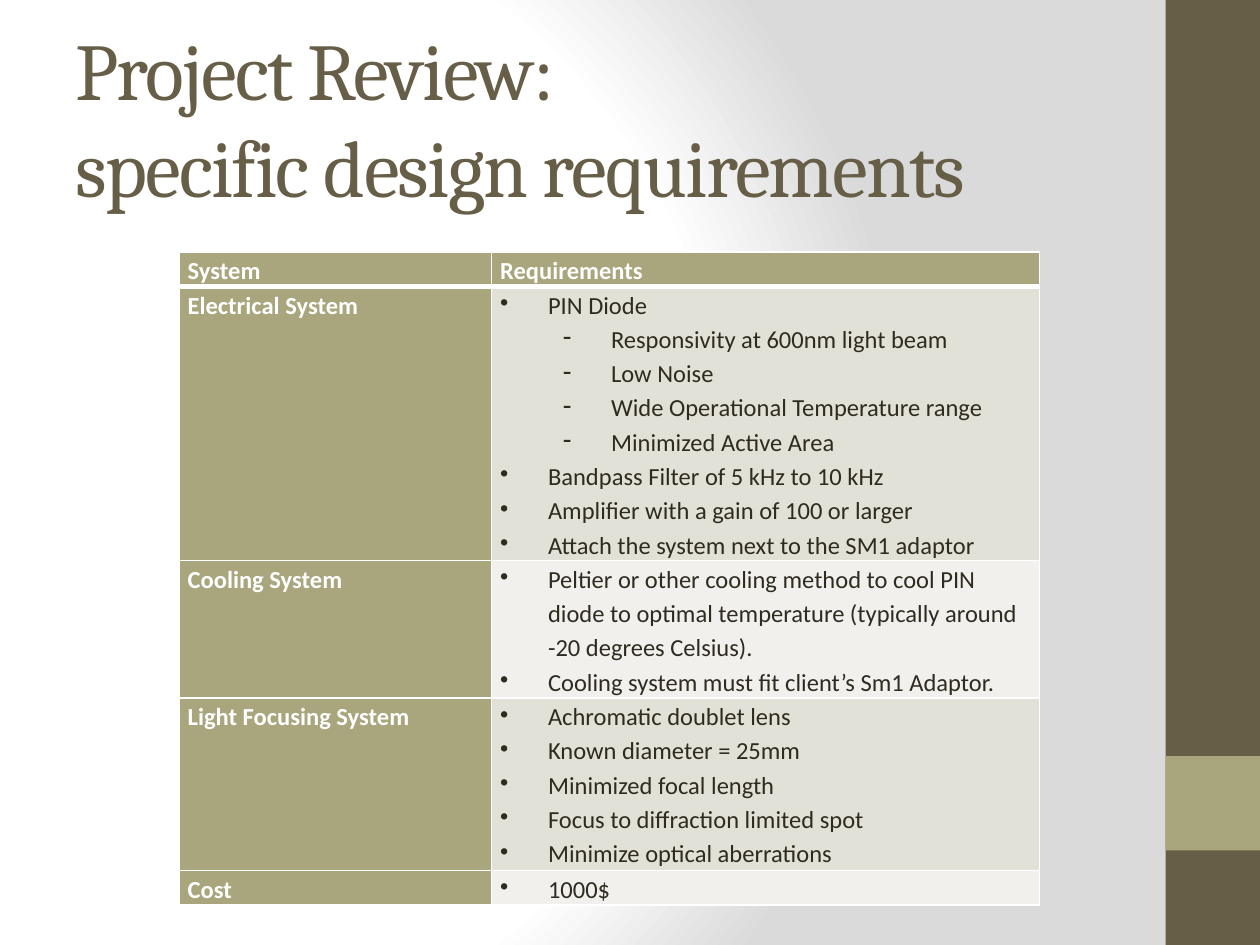
import lxml.etree
import pptx
import pptx.dml.color
import pptx.enum.shapes
import pptx.enum.text
import pptx.oxml
import pptx.oxml.ns
import pptx.util

Inches = pptx.util.Inches
Pt = pptx.util.Pt
qn = pptx.oxml.ns.qn

COLORS = {
    "brown": "675E47",
    "olive": "A9A57C",
    "dark": "2F2B20",
    "band": "E2E1D7",
    "light": "F1F0EC",
    "white": "FFFFFF",
    "gray": "DADADA",
}

ROWS = [
    ("Electrical System", 2.17, [
        (0, "PIN Diode"),
        (1, "Responsivity at 600nm light beam"),
        (1, "Low Noise"),
        (1, "Wide Operational Temperature range"),
        (1, "Minimized Active Area"),
        (0, "Bandpass Filter of 5 kHz to 10 kHz"),
        (0, "Amplifier with a gain of 100 or larger"),
        (0, "Attach the system next to the SM1 adaptor"),
    ]),
    ("Cooling System", 1.09, [
        (0, "Peltier or other cooling method to cool PIN diode to optimal "
            "temperature (typically around -20 degrees Celsius)."),
        (0, "Cooling system must fit client’s Sm1 Adaptor."),
    ]),
    ("Light Focusing System", 1.37, [
        (0, "Achromatic doublet lens"),
        (0, "Known diameter = 25mm"),
        (0, "Minimized focal length"),
        (0, "Focus to diffraction limited spot"),
        (0, "Minimize optical aberrations"),
    ]),
    ("Cost", 0.27, [(0, "1000$")]),
]


def rgb(name):
    return pptx.dml.color.RGBColor.from_string(COLORS[name])


class SlideBuilder:
    heading_font = "Cambria"
    body_font = "Calibri"

    def __init__(self, slide):
        self.slide = slide

    def background(self, stops):
        self.slide.background.fill.gradient()
        gradient = self.slide.element.find(".//" + qn("a:gradFill"))
        for child in list(gradient):
            gradient.remove(child)
        stop_list = lxml.etree.SubElement(gradient, qn("a:gsLst"))
        for percent, color in stops:
            stop = lxml.etree.SubElement(stop_list, qn("a:gs"), pos=str(percent * 1000))
            lxml.etree.SubElement(stop, qn("a:srgbClr"), val=COLORS[color])
        circle = lxml.etree.SubElement(gradient, qn("a:path"), path="circle")
        lxml.etree.SubElement(circle, qn("a:fillToRect"),
                              l="20000", t="50000", r="100000", b="50000")

    def rectangle(self, left, top, width, height, color):
        shape = self.slide.shapes.add_shape(
            pptx.enum.shapes.MSO_SHAPE.RECTANGLE,
            Inches(left), Inches(top), Inches(width), Inches(height))
        shape.shadow.inherit = False
        shape.fill.solid()
        shape.fill.fore_color.rgb = rgb(color)
        shape.line.fill.background()

    def run(self, paragraph, text, font, size, color, bold=False):
        run = paragraph.add_run()
        run.text = text
        run.font.name = font
        run.font.size = Pt(size)
        run.font.bold = bold
        run.font.color.rgb = rgb(color)
        return run

    def title(self, lines, left, top, width, height):
        title = self.slide.shapes.title
        title.left, title.top = Inches(left), Inches(top)
        title.width, title.height = Inches(width), Inches(height)
        frame = title.text_frame
        frame.word_wrap = True
        frame.auto_size = pptx.enum.text.MSO_AUTO_SIZE.NONE
        frame.vertical_anchor = pptx.enum.text.MSO_ANCHOR.MIDDLE
        paragraph = frame.paragraphs[0]
        paragraph.alignment = pptx.enum.text.PP_ALIGN.LEFT
        for index, line in enumerate(lines):
            if index:
                paragraph.add_line_break()
            run = self.run(paragraph, line, self.heading_font, 46, "brown")
            run.font._element.set("spc", "-100")

    def borders(self, cell, top=1, bottom=1):
        properties = cell._tc.get_or_add_tcPr()
        sides = (("a:lnL", 1), ("a:lnR", 1), ("a:lnT", top), ("a:lnB", bottom))
        for index, (tag, width) in enumerate(sides):
            line = lxml.etree.Element(qn(tag), w=str(Pt(width)))
            fill = lxml.etree.SubElement(line, qn("a:solidFill"))
            lxml.etree.SubElement(fill, qn("a:srgbClr"), val=COLORS["white"])
            properties.insert(index, line)

    def bullet(self, paragraph, level):
        paragraph.level = level
        properties = paragraph._p.get_or_add_pPr()
        properties.set("marL", str(Inches(0.38 + 0.5 * level)))
        properties.set("indent", str(Inches(-0.38)))
        lxml.etree.SubElement(properties, qn("a:buChar"), char="•-"[level])

    def cell(self, cell, items, fill, color, bold=False, bulleted=False, **borders):
        cell.margin_left = cell.margin_right = Inches(0.07)
        cell.margin_top = cell.margin_bottom = 0
        cell.fill.solid()
        cell.fill.fore_color.rgb = rgb(fill)
        self.borders(cell, **borders)
        frame = cell.text_frame
        for index, (level, text) in enumerate(items):
            paragraph = frame.add_paragraph() if index else frame.paragraphs[0]
            paragraph.line_spacing = 1.15
            if bulleted:
                self.bullet(paragraph, level)
            self.run(paragraph, text, self.body_font, 14, color, bold)

    def requirements_table(self, left, top, widths, header, header_height, rows):
        heights = [header_height] + [height for _, height, _ in rows]
        table = self.slide.shapes.add_table(
            len(heights), len(widths), Inches(left), Inches(top),
            Inches(sum(widths)), Inches(sum(heights))).table
        for column, width in zip(table.columns, widths):
            column.width = Inches(width)
        for row, height in zip(table.rows, heights):
            row.height = Inches(height)
        for column, text in enumerate(header):
            self.cell(table.cell(0, column), [(0, text)], "olive", "white",
                      bold=True, bottom=3)
        for index, (system, _, requirements) in enumerate(rows, 1):
            top_border = 3 if index == 1 else 1
            self.cell(table.cell(index, 0), [(0, system)], "olive", "white",
                      bold=True, top=top_border)
            self.cell(table.cell(index, 1), requirements,
                      "band" if index % 2 else "light", "dark",
                      bulleted=True, top=top_border)


def main():
    presentation = pptx.Presentation()
    presentation.slide_width = Inches(10)
    presentation.slide_height = Inches(7.5)
    builder = SlideBuilder(presentation.slides.add_slide(presentation.slide_layouts[5]))
    builder.background([(0, "white"), (75, "white"), (100, "gray")])
    builder.rectangle(9.25, 0, 0.75, 7.5, "brown")
    builder.rectangle(9.25, 6, 0.75, 0.75, "olive")
    builder.title(["Project Review:", "specific design requirements"], 0.5, 0.3, 8.33, 1.25)
    builder.requirements_table(1.42, 2, [2.48, 4.35], ["System", "Requirements"], 0.27, ROWS)
    presentation.save("out.pptx")


if __name__ == "__main__":
    main()
